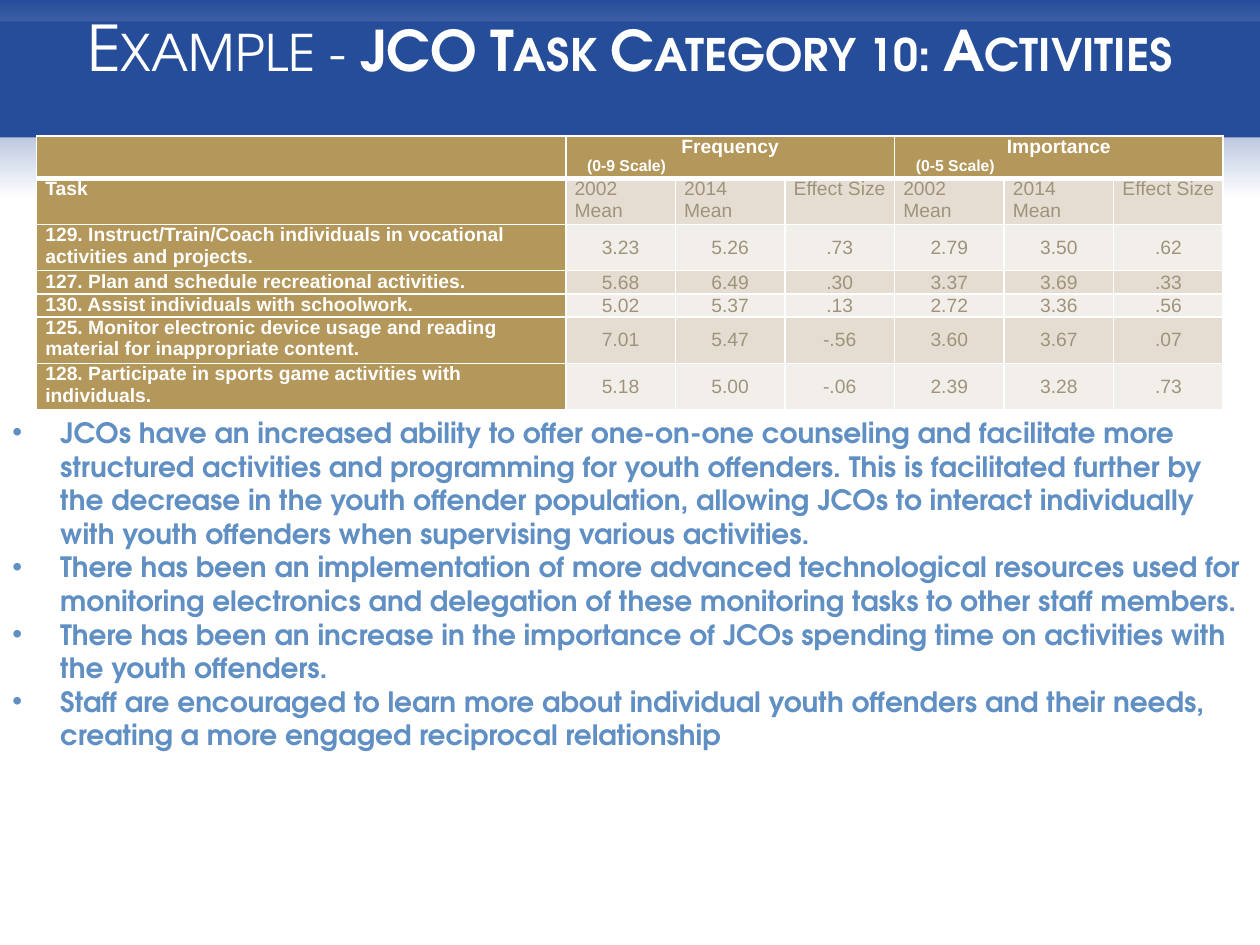
from lxml.etree import SubElement
from pptx import Presentation
from pptx.dml.color import RGBColor
from pptx.enum.text import MSO_ANCHOR, PP_ALIGN
from pptx.oxml.ns import qn
from pptx.util import Inches, Pt

BLUE = RGBColor(0x26, 0x4D, 0x9A)
SKY = RGBColor(0x60, 0x8F, 0xC3)
WHITE = RGBColor(0xFF, 0xFF, 0xFF)
GOLD = RGBColor(0xB4, 0x97, 0x5A)
TAUPE = RGBColor(0xA0, 0x93, 0x7C)
SAND = RGBColor(0xE5, 0xDD, 0xD2)
PALE = RGBColor(0xF2, 0xEF, 0xEA)
DISPLAY = "TeX Gyre Adventor"


def write(par, text, size=11, color=WHITE, face="Arial", bold=True,
          caps=False, align=PP_ALIGN.LEFT):
    par.alignment = align
    run = par.add_run()
    run.text = text
    font = run.font
    font.size, font.name, font.bold = Pt(size), face, bold
    font.color.rgb = color
    if caps:
        run._r.get_or_add_rPr().set("cap", "small")


def dress(cell, fill, top=1, bottom=1):
    """Set margins, white borders (widths in points) and fill of a cell."""
    cell.margin_left = cell.margin_right = Inches(0.07)
    cell.margin_top = cell.margin_bottom = 0
    props = cell._tc.get_or_add_tcPr()
    for side, width in (("L", 1), ("R", 1), ("T", top), ("B", bottom)):
        line = SubElement(props, qn(f"a:ln{side}"), w=str(Pt(width)))
        solid = SubElement(line, qn("a:solidFill"))
        SubElement(solid, qn("a:srgbClr"), val=str(WHITE))
    cell.fill.solid()
    cell.fill.fore_color.rgb = fill


deck = Presentation()
deck.slide_width, deck.slide_height = Inches(10), Inches(7.5)
slide = deck.slides.add_slide(deck.slide_layouts[6])

# Background
back = slide.background.fill
back.gradient()
back.gradient_angle = 270
for stop, place, color in zip(back.gradient_stops, (0, 0.21), (BLUE, WHITE)):
    stop.position = place
    stop.color.rgb = color

# Title band
band = slide.shapes.add_textbox(0, Inches(0.17), Inches(10), Inches(0.92))
band.fill.solid()
band.fill.fore_color.rgb = BLUE
frame = band.text_frame
frame.word_wrap = True
frame.vertical_anchor = MSO_ANCHOR.MIDDLE
frame.margin_top, frame.margin_bottom = 0, Inches(0.53)
title = frame.paragraphs[0]
write(title, "Example - ", size=36, face=DISPLAY, bold=False, caps=True)
write(title, "JCO Task Category 10: Activities", size=32, face=DISPLAY,
      caps=True, align=PP_ALIGN.CENTER)

# Task table
heads = ["2002 Mean", "2014 Mean", "Effect Size"] * 2
tasks = [
    ("129. Instruct/Train/Coach individuals in vocational activities and projects.",
     "3.23", "5.26", ".73", "2.79", "3.50", ".62"),
    ("127. Plan and schedule recreational activities.",
     "5.68", "6.49", ".30", "3.37", "3.69", ".33"),
    ("130. Assist individuals with schoolwork.",
     "5.02", "5.37", ".13", "2.72", "3.36", ".56"),
    ("125. Monitor electronic device usage and reading material for inappropriate content.",
     "7.01", "5.47", "-.56", "3.60", "3.67", ".07"),
    ("128. Participate in sports game activities with individuals.",
     "5.18", "5.00", "-.06", "2.39", "3.28", ".73"),
]
heights = [0.31, 0.34, 0.34, 0.17, 0.17, 0.34, 0.34]
table = slide.shapes.add_table(len(heights), 7, Inches(0.29), Inches(1.08),
                               Inches(9.42), Inches(sum(heights))).table
table.horz_banding = False
for row, height in zip(table.rows, heights):
    row.height = Inches(height)
for c, col in enumerate(table.columns):
    col.width = Inches(0.87 if c else 4.2)

for c in range(7):
    dress(table.cell(0, c), GOLD, bottom=3)
for c, name, scale in ((1, "Frequency", "(0-9 Scale)"),
                       (4, "Importance", "(0-5 Scale)")):
    cell = table.cell(0, c)
    cell.merge(table.cell(0, c + 2))
    write(cell.text_frame.paragraphs[0], name, align=PP_ALIGN.CENTER)
    note = cell.text_frame.add_paragraph()
    note._p.get_or_add_pPr().set("marL", str(Inches(0.1)))
    write(note, scale, size=9)

for r, row in enumerate([("Task", *heads), *tasks], 1):
    for c, text in enumerate(row):
        cell = table.cell(r, c)
        shade = SAND if r % 2 else PALE
        dress(cell, shade if c else GOLD, top=3 if r == 1 else 1)
        number = r > 1 and c > 0
        if number:
            cell.vertical_anchor = MSO_ANCHOR.MIDDLE
        write(cell.text_frame.paragraphs[0], text, bold=c == 0,
              color=TAUPE if c else WHITE,
              align=PP_ALIGN.CENTER if number else PP_ALIGN.LEFT)

# Findings
points = [
    "JCOs have an increased ability to offer one-on-one counseling and facilitate "
    "more structured activities and programming for youth offenders. This is "
    "facilitated further by the decrease in the youth offender population, allowing "
    "JCOs to interact individually with youth offenders when supervising various "
    "activities.",
    "There has been an implementation of more advanced technological resources used "
    "for monitoring electronics and delegation of these monitoring tasks to other "
    "staff members.",
    "There has been an increase in the importance of JCOs spending time on "
    "activities with the youth offenders.",
    "Staff are encouraged to learn more about individual youth offenders and their "
    "needs, creating a more engaged reciprocal relationship",
]
frame = slide.shapes.add_textbox(0, Inches(3.25), Inches(10), Inches(3.06)).text_frame
frame.word_wrap = True
for i, text in enumerate(points):
    par = frame.add_paragraph() if i else frame.paragraphs[0]
    props = par._p.get_or_add_pPr()
    props.set("marL", str(Inches(0.38)))
    props.set("indent", str(Inches(-0.38)))
    SubElement(props, qn("a:buFont"), typeface="Arial")
    SubElement(props, qn("a:buChar"), char="•")
    write(par, text, size=16, color=SKY, face=DISPLAY)

deck.save("out.pptx")
